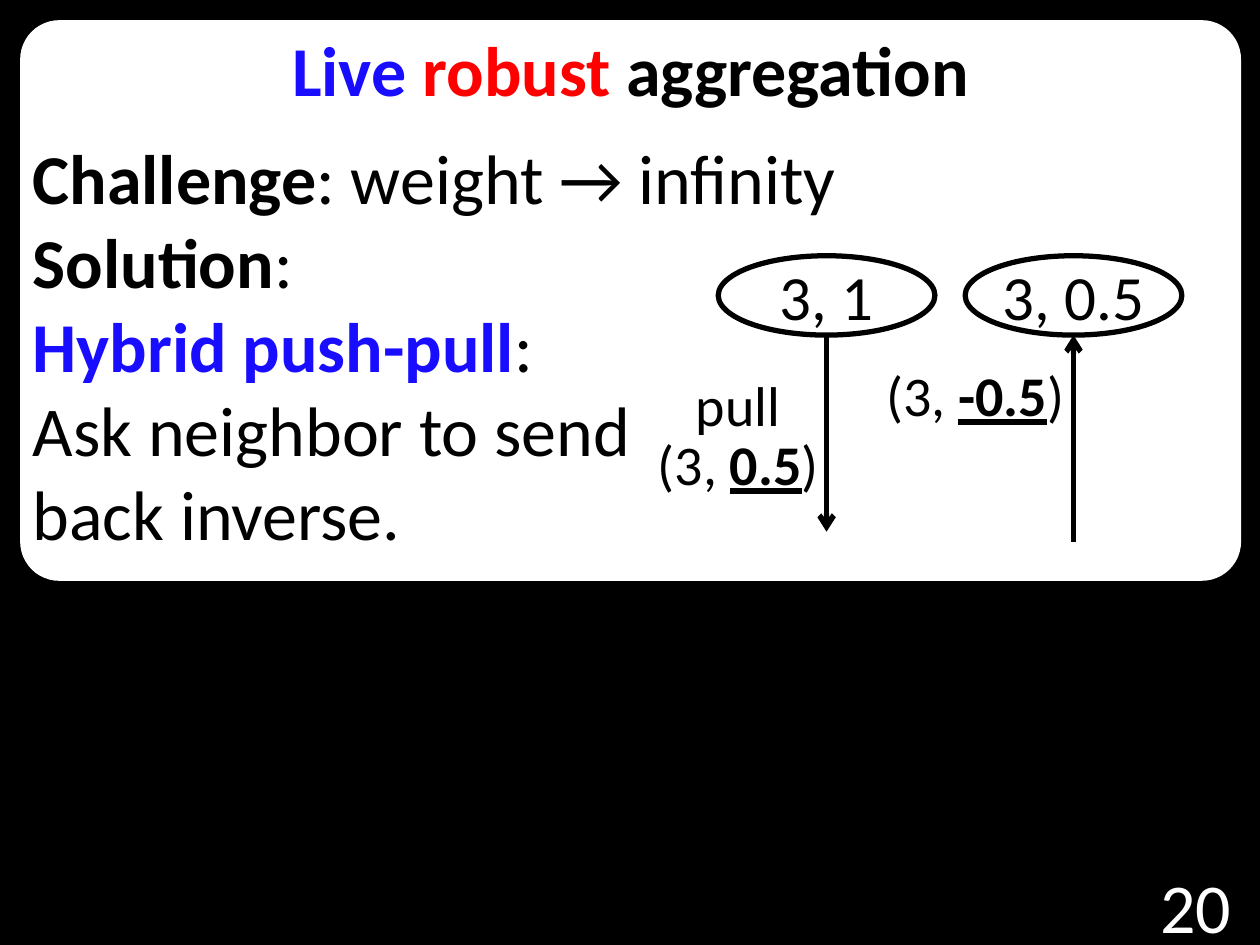
from dataclasses import dataclass
from typing import Optional

from lxml import etree
from pptx import Presentation
from pptx import util as u
from pptx.dml.color import RGBColor
from pptx.enum import shapes, text
from pptx.oxml.ns import qn

SLIDE_W, SLIDE_H = 10, 7.5
BLACK, WHITE, BLUE, RED = "000000", "FFFFFF", "190DFF", "FF0000"
MARGIN, PANEL_W, PANEL_H = 0.16, 9.69, 4.45
NODE_W, NODE_H, NODE_TOP = 1.72, 0.63, 2.03
NODE_BOTTOM = NODE_TOP + NODE_H
COLUMNS = [6.56, 8.52]


@dataclass
class Run:
    words: str
    color: str = BLACK
    bold: bool = False
    underline: bool = False


@dataclass
class Node:
    center: float
    value: str


@dataclass
class Message:
    left: float
    top: float
    width: float
    runs: list[Run]


@dataclass
class Flow:
    x: float
    start: float
    end: float


def rgb(code: str) -> RGBColor:
    return RGBColor.from_string(code)


def place(shape, left: float, top: float, width: float, height: float) -> None:
    box = dict(left=left, top=top, width=width, height=height)
    for side, inches in box.items():
        setattr(shape, side, u.Inches(inches))


def format_frame(frame, **values) -> None:
    for key, value in values.items():
        setattr(frame, key, value)


def write(paragraph, runs: list[Run], size: int, align=text.PP_ALIGN.CENTER) -> None:
    paragraph.alignment = align
    for part in runs:
        run = paragraph.add_run()
        run.text = part.words
        run.font.color.rgb = rgb(part.color)
        look = dict(name="Calibri", size=u.Pt(size), bold=part.bold, underline=part.underline)
        for key, value in look.items():
            setattr(run.font, key, value)


def add_block(slide, kind, box: tuple, fill: Optional[str] = None, line: Optional[str] = None):
    block = slide.shapes.add_shape(kind, *(u.Inches(v) for v in box))
    block.shadow.inherit = False
    if fill:
        block.fill.solid()
        block.fill.fore_color.rgb = rgb(fill)
    else:
        block.fill.background()
    if line:
        block.line.color.rgb = rgb(line)
        block.line.width = u.Pt(3)
    else:
        block.line.fill.background()
    return block


def add_panel(slide) -> None:
    panel = add_block(slide, shapes.MSO_SHAPE.ROUNDED_RECTANGLE,
                      (MARGIN, MARGIN, PANEL_W, PANEL_H), WHITE)
    panel.adjustments[0] = 0.07
    slide.shapes._spTree.insert(2, panel._element)


def add_page_number(slide, number: str) -> None:
    width, height = 1.02, 0.63
    badge = add_block(slide, shapes.MSO_SHAPE.ROUNDED_RECTANGLE,
                      (SLIDE_W - width, SLIDE_H - height, width, height), BLACK)
    badge.text_frame.vertical_anchor = text.MSO_ANCHOR.MIDDLE
    write(badge.text_frame.paragraphs[0], [Run(number, WHITE)], 40)


def fill_title(slide, runs: list[Run]) -> None:
    title = slide.shapes.title
    place(title, MARGIN, MARGIN, PANEL_W, 0.77)
    format_frame(title.text_frame, vertical_anchor=text.MSO_ANCHOR.TOP,
                 auto_size=text.MSO_AUTO_SIZE.NONE)
    write(title.text_frame.paragraphs[0], runs, 40)


def fill_body(slide, lines: list[list[Run]]) -> None:
    body = slide.placeholders[1]
    place(body, MARGIN, 1.02, PANEL_W, 3.47)
    frame = body.text_frame
    frame.auto_size = text.MSO_AUTO_SIZE.NONE
    for index, runs in enumerate(lines):
        paragraph = frame.add_paragraph() if index else frame.paragraphs[0]
        paragraph.space_before = u.Pt(0)
        hang = u.Inches(0.81) if index else 0
        properties = paragraph._p.get_or_add_pPr()
        properties.set("marL", str(hang))
        properties.set("indent", str(-hang))
        etree.SubElement(properties, qn("a:buNone"))
        write(paragraph, runs, 40, text.PP_ALIGN.LEFT)


def add_node(slide, node: Node) -> None:
    oval = add_block(slide, shapes.MSO_SHAPE.OVAL,
                     (node.center - NODE_W / 2, NODE_TOP, NODE_W, NODE_H), line=BLACK)
    format_frame(oval.text_frame, margin_left=0, margin_right=0, margin_top=0, margin_bottom=0,
                 word_wrap=False, vertical_anchor=text.MSO_ANCHOR.MIDDLE)
    write(oval.text_frame.paragraphs[0], [Run(node.value)], 36)


def add_message(slide, message: Message) -> None:
    box = (message.left, message.top, message.width, 0.64)
    label = slide.shapes.add_textbox(*(u.Inches(v) for v in box))
    label.text_frame.word_wrap = True
    write(label.text_frame.paragraphs[0], message.runs, 32)


def add_flow(slide, flow: Flow) -> None:
    ends = (flow.x, flow.start, flow.x, flow.end)
    arrow = slide.shapes.add_connector(shapes.MSO_CONNECTOR.STRAIGHT, *(u.Inches(v) for v in ends))
    arrow.line.color.rgb = rgb(BLACK)
    arrow.line.width = u.Pt(3)
    etree.SubElement(arrow.line._get_or_add_ln(), qn("a:tailEnd"), type="arrow")
    etree.SubElement(arrow._element.spPr, qn("a:effectLst"))


def pair(weight: str) -> list[Run]:
    return [Run("(3, "), Run(weight, bold=True, underline=True), Run(")")]


TITLE = [Run("Live ", BLUE, True), Run("robust ", RED, True), Run("aggregation", bold=True)]
BODY = [
    [Run("Challenge", bold=True), Run(": weight → infinity")],
    [Run("Solution", bold=True), Run(":")],
    [Run("Hybrid push-pull", BLUE, True), Run(":")],
    [Run("Ask neighbor to send")],
    [Run("back inverse.")],
]
NODES = [Node(COLUMNS[0], "3, 1"), Node(COLUMNS[1], "3, 0.5")]
FLOWS = [Flow(COLUMNS[0], NODE_BOTTOM, 4.22), Flow(COLUMNS[1], 4.3, NODE_BOTTOM)]
MESSAGES = [
    Message(5.08, 2.89, 1.56, [Run("pull")]),
    Message(5.08, 3.36, 1.56, pair("0.5")),
    Message(6.88, 2.81, 1.72, pair("-0.5")),
]


def main() -> None:
    deck = Presentation()
    deck.slide_width, deck.slide_height = u.Inches(SLIDE_W), u.Inches(SLIDE_H)
    slide = deck.slides.add_slide(deck.slide_layouts[1])
    slide.background.fill.solid()
    slide.background.fill.fore_color.rgb = rgb(BLACK)
    add_panel(slide)
    add_page_number(slide, "20")
    fill_title(slide, TITLE)
    fill_body(slide, BODY)
    for draw, items in ((add_node, NODES), (add_flow, FLOWS), (add_message, MESSAGES)):
        for item in items:
            draw(slide, item)
    deck.save("out.pptx")


if __name__ == "__main__":
    main()
